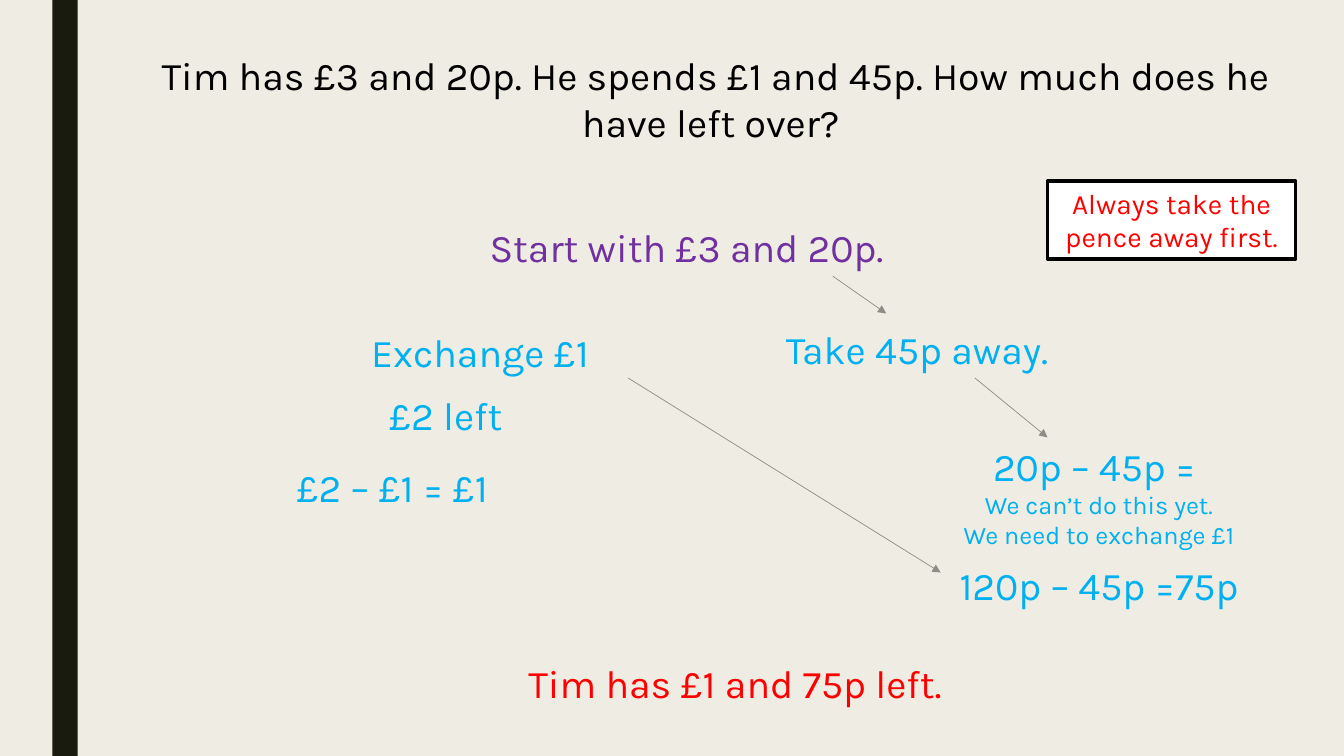
from pptx import Presentation
from pptx.dml.color import RGBColor as Rgb
from pptx.enum.shapes import MSO_CONNECTOR as Link, MSO_SHAPE as Shape
from pptx.enum.text import MSO_ANCHOR as Anchor, MSO_AUTO_SIZE as AutoSize, PP_ALIGN as Align
from pptx.oxml.ns import qn
from pptx.util import Inches, Pt
from lxml.etree import SubElement

QUESTION = "Tim has £3 and 20p. He spends £1 and 45p. How much does he have left over? "
QUESTION_AREA = (1.35, 0.46, 11.49, 1.04)
REMINDER = "Always take the pence away first."
REMINDER_AREA = (10.39, 1.8, 2.46, 0.77)
SIDEBAR_AREA = (0.52, 0, 0.25, 7.5)
STEPS = [
    ((1.11, 2.17, 11.49, 0.57), "start", [("Start with £3 and 20p. ", "main")]),
    ((7.53, 3.18, 3.13, 0.57), "working", [("Take 45p away.", "main")]),
    ((9.09, 4.34, 3.62, 1.18), "working", [
        ("20p – 45p = ", "main"),
        ("We can’t do this yet.", "detail"),
        ("We need to exchange £1", "detail"),
    ]),
    ((2.95, 3.21, 3.62, 0.57), "working", [("Exchange £1", "main")]),
    ((2.61, 3.83, 3.62, 0.57), "working", [("£2 left", "main")]),
    ((2.08, 4.55, 3.62, 0.57), "working", [("£2 – £1 = £1", "main")]),
    ((9.09, 5.52, 3.62, 0.57), "working", [("120p – 45p =75p", "main")]),
    ((1.59, 6.49, 11.49, 0.57), "answer", [("Tim has £1 and 75p left. ", "main")]),
]
ARROWS = [
    (8.26, 2.74, 8.79, 3.11),
    (9.67, 3.75, 10.39, 4.34),
    (6.23, 3.75, 9.33, 5.68),
]
THEME = {
    "font": "Karla",
    "sizes": {"main": Pt(28), "reminder": Pt(20), "detail": Pt(18)},
    "colours": {
        name: Rgb.from_string(value)
        for name, value in {
            "background": "EFEDE3", "sidebar": "191B0E", "question": "000000",
            "start": "7030A0", "working": "00B0F0", "answer": "FF0000",
            "arrow": "8C8D86", "panel": "FFFFFF", "border": "000000",
        }.items()
    },
}
COLOURS = THEME["colours"]
FRAME_FORMAT = {
    "word_wrap": True,
    "auto_size": AutoSize.NONE,
    "vertical_anchor": Anchor.TOP,
    "margin_left": Inches(0.1),
    "margin_right": Inches(0.1),
    "margin_top": Inches(0.05),
    "margin_bottom": Inches(0.05),
}


def apply_format(target, values):
    for name, value in values.items():
        setattr(target, name, value)


def lengths(area):
    return [Inches(value) for value in area]


def write(box, lines, colour):
    frame = box.text_frame
    apply_format(frame, FRAME_FORMAT)
    for index, (text, size) in enumerate(lines):
        para = frame.add_paragraph() if index else frame.paragraphs[0]
        para.alignment = Align.CENTER
        span = para.add_run()
        span.text = text
        apply_format(span.font, {"name": THEME["font"], "size": THEME["sizes"][size]})
        span.font.color.rgb = COLOURS[colour]


def add_panel(page, area, fill):
    box = page.shapes.add_shape(Shape.RECTANGLE, *lengths(area))
    box.shadow.inherit = False
    box.fill.solid()
    box.fill.fore_color.rgb = COLOURS[fill]
    return box


def add_arrow(page, ends):
    arrow = page.shapes.add_connector(Link.STRAIGHT, *lengths(ends))
    arrow.line.color.rgb = COLOURS["arrow"]
    arrow.line.width = Pt(0.5)
    SubElement(arrow.line._get_or_add_ln(), qn("a:tailEnd"), type="triangle")
    SubElement(arrow._element.spPr, qn("a:effectLst"))


def main():
    deck = Presentation()
    apply_format(deck, {"slide_width": Inches(13.33), "slide_height": Inches(7.5)})
    page = deck.slides.add_slide(deck.slide_layouts[5])
    page.background.fill.solid()
    page.background.fill.fore_color.rgb = COLOURS["background"]

    add_panel(page, SIDEBAR_AREA, "sidebar").line.fill.background()

    title = page.shapes.title
    apply_format(title, dict(zip(("left", "top", "width", "height"), lengths(QUESTION_AREA))))
    write(title, [(QUESTION, "main")], "question")

    for area, colour, lines in STEPS:
        write(page.shapes.add_textbox(*lengths(area)), lines, colour)

    reminder = add_panel(page, REMINDER_AREA, "panel")
    reminder.line.color.rgb = COLOURS["border"]
    reminder.line.width = Pt(2.75)
    write(reminder, [(REMINDER, "reminder")], "answer")

    for ends in ARROWS:
        add_arrow(page, ends)

    deck.save("out.pptx")


if __name__ == "__main__":
    main()
